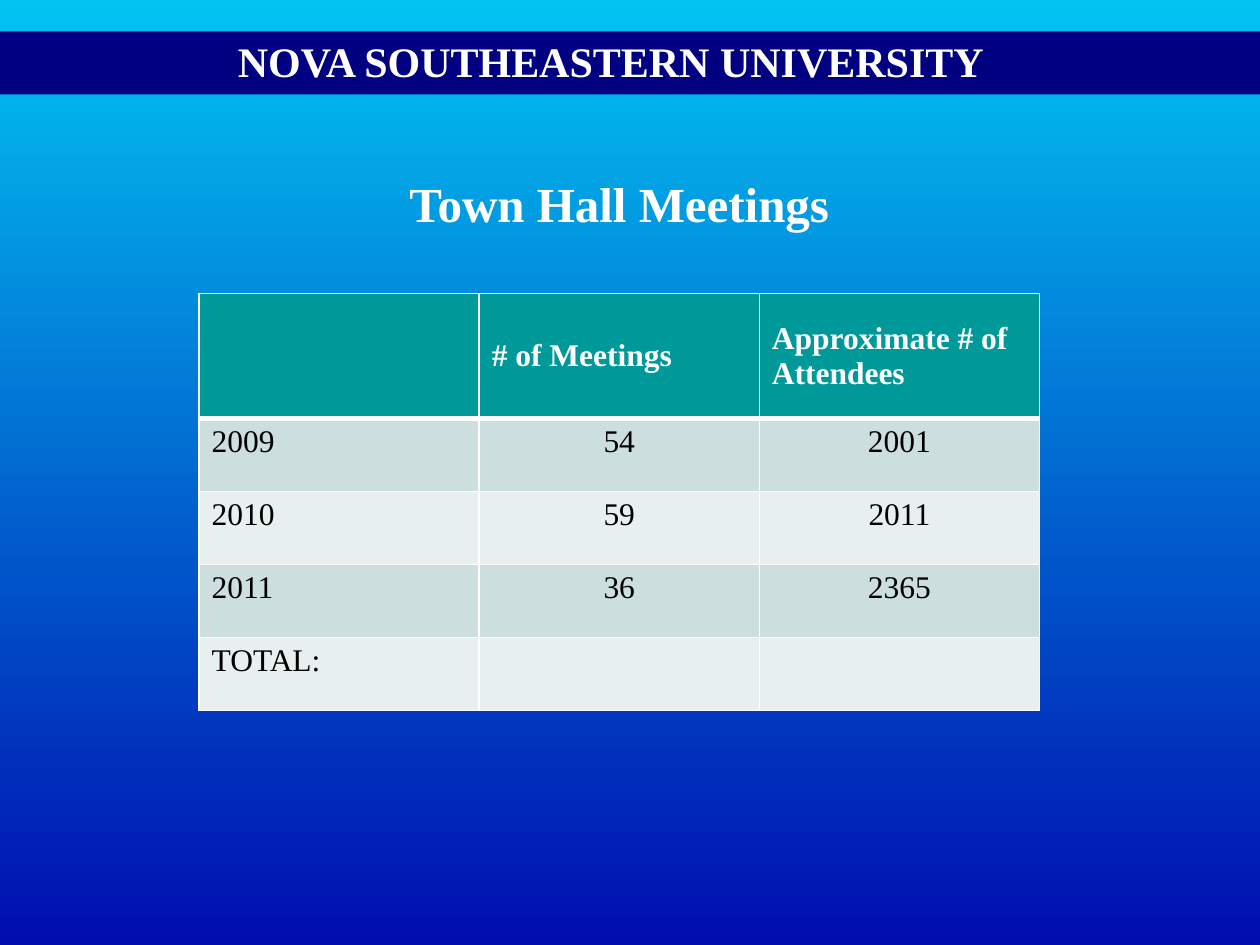
from dataclasses import dataclass

from lxml.etree import SubElement
from pptx import Presentation
from pptx.dml.color import RGBColor
from pptx.enum.shapes import MSO_SHAPE
from pptx.enum.text import MSO_ANCHOR, PP_ALIGN
from pptx.oxml.ns import qn
from pptx.util import Inches, Pt


@dataclass(frozen=True)
class Theme:
    font: str = "Times New Roman"
    sky: str = "02C4F2"
    deep: str = "010DAF"
    navy: str = "000080"
    teal: str = "009999"
    bands: tuple = ("CCDEDE", "E7EFEF")
    white: str = "FFFFFF"
    black: str = "000000"
    banner_size: int = 24
    title_size: int = 28
    table_size: int = 18


THEME = Theme()

ROWS = [
    ("", "# of Meetings", "Approximate # of Attendees"),
    ("2009", "54", "2001"),
    ("2010", "59", "2011"),
    ("2011", "36", "2365"),
    ("TOTAL:", "", ""),
]


def rgb(color):
    return RGBColor.from_string(color)


def style_font(font, size, color, bold):
    font.name = THEME.font
    font.size = Pt(size)
    font.bold = bold
    font.color.rgb = rgb(color)


def add_text(slide, text, box, size, wrap=True, align=PP_ALIGN.LEFT):
    tf = slide.shapes.add_textbox(*box).text_frame
    tf.word_wrap = wrap
    tf.text = text
    p = tf.paragraphs[0]
    p.alignment = align
    style_font(p.runs[0].font, size, THEME.white, True)
    return p


def add_background(slide):
    fill = slide.background.fill
    fill.gradient()
    fill.gradient_angle = 270
    for stop, color, position in zip(fill.gradient_stops, (THEME.sky, THEME.deep), (0, 1)):
        stop.color.rgb = rgb(color)
        stop.position = position


def add_banner(slide, left, top, width, height):
    bar = slide.shapes.add_shape(MSO_SHAPE.RECTANGLE, left, top, width, height)
    bar.shadow.inherit = False
    bar.fill.solid()
    bar.fill.fore_color.rgb = rgb(THEME.navy)
    bar.line.fill.background()
    name_box = (left + Inches(1.79), top - Inches(0.06), Inches(6.46), Inches(0.54))
    p = add_text(slide, "NOVA SOUTHEASTERN UNIVERSITY", name_box, THEME.banner_size, wrap=False)
    p.line_spacing = 1.1


def set_borders(cell, bottom):
    tc_pr = cell._tc.get_or_add_tcPr()
    widths = {"a:lnL": 1, "a:lnR": 1, "a:lnT": 1, "a:lnB": bottom}
    for index, (tag, width) in enumerate(widths.items()):
        ln = SubElement(tc_pr, qn(tag), w=str(Pt(width)))
        fill = SubElement(ln, qn("a:solidFill"))
        SubElement(fill, qn("a:srgbClr"), val=THEME.white)
        tc_pr.insert(index, ln)  # borders come before the cell fill


def fill_cell(cell, text, row, col):
    header = row == 0
    cell.fill.solid()
    cell.fill.fore_color.rgb = rgb(THEME.teal if header else THEME.bands[(row - 1) % 2])
    # The rule under the header is heavier and shared with the first row
    set_borders(cell, bottom=3 if header else 1)
    cell.vertical_anchor = MSO_ANCHOR.MIDDLE if header else MSO_ANCHOR.TOP
    cell.text = text
    p = cell.text_frame.paragraphs[0]
    p.alignment = PP_ALIGN.CENTER if col and not header else PP_ALIGN.LEFT
    color = THEME.white if header else THEME.black
    for r in p.runs:
        style_font(r.font, THEME.table_size, color, header)


def add_meetings_table(slide, left, top, width, height):
    n_rows, n_cols = len(ROWS), len(ROWS[0])
    table = slide.shapes.add_table(n_rows, n_cols, left, top, width, height).table
    header_height = Inches(0.99)
    for column in table.columns:
        column.width = width // n_cols
    for i, row in enumerate(table.rows):
        row.height = header_height if i == 0 else (height - header_height) // (n_rows - 1)
        for j, cell in enumerate(row.cells):
            fill_cell(cell, ROWS[i][j], i, j)


def main():
    prs = Presentation()
    prs.slide_width, prs.slide_height = Inches(10), Inches(7.5)
    s = prs.slides.add_slide(prs.slide_layouts[6])

    add_background(s)
    # University banner
    add_banner(s, 0, Inches(0.25), prs.slide_width, Inches(0.5))
    # Meeting counts by year
    add_meetings_table(s, Inches(1.58), Inches(2.33), Inches(6.67), Inches(3.31))
    # Slide title
    title_box = (Inches(1.5), Inches(1.33), Inches(6.83), Inches(0.57))
    add_text(s, "Town Hall Meetings", title_box, THEME.title_size, align=PP_ALIGN.CENTER)

    prs.save("out.pptx")


if __name__ == "__main__":
    main()
